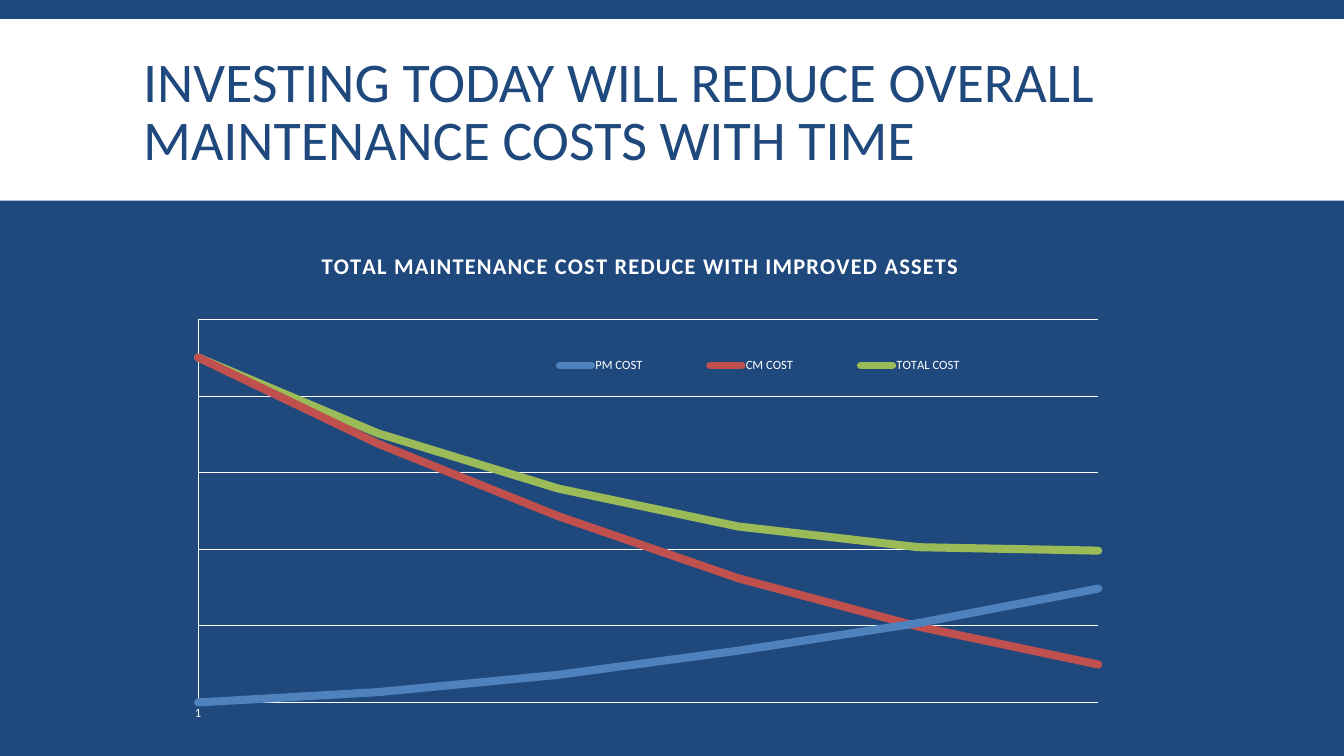
"""Build the maintenance cost slide with its smooth scatter chart."""
from dataclasses import dataclass

from pptx import Presentation
from pptx.chart.data import XyChartData
from pptx.dml.color import RGBColor
from pptx.enum.chart import XL_CHART_TYPE as CT, XL_LEGEND_POSITION as LP, XL_TICK_MARK as TM
from pptx.enum.shapes import MSO_SHAPE
from pptx.enum.text import MSO_ANCHOR, MSO_AUTO_SIZE, PP_ALIGN
from pptx.oxml import parse_xml
from pptx.oxml.ns import nsdecls, qn
from pptx.util import Inches, Pt

NAVY = RGBColor(0x1F, 0x49, 0x7D)
WHITE = RGBColor(0xFF, 0xFF, 0xFF)
BLUE = RGBColor(0x4F, 0x81, 0xBD)
RED = RGBColor(0xC0, 0x50, 0x4D)
GREEN = RGBColor(0x9B, 0xBB, 0x59)
FONT = "Calibri"


@dataclass
class Cost:
    name: str
    color: RGBColor
    values: tuple[int, ...]


COSTS = [
    Cost("PM COST", BLUE, (0, 3, 8, 15, 23, 33)),
    Cost("CM COST", RED, (100, 75, 54, 36, 22, 11)),
    Cost("TOTAL COST", GREEN, (100, 78, 62, 51, 45, 44)),
]


def style_font(font, size: float, color: RGBColor, bold: bool = False) -> None:
    font.name = FONT
    font.size = Pt(size)
    font.bold = bold
    font.color.rgb = color


def style_line(line, color: RGBColor, width: float) -> None:
    line.color.rgb = color
    line.width = Pt(width)


def place(element, index: int, inner: bool = False, **fractions: float) -> None:
    for old in element.findall(qn("c:layout")):
        element.remove(old)
    target = '<c:layoutTarget val="inner"/>' if inner else ""
    modes = '<c:xMode val="edge"/><c:yMode val="edge"/>'
    sizes = "".join(f'<c:{key} val="{val}"/>' for key, val in fractions.items())
    element.insert(index, parse_xml(
        f'<c:layout {nsdecls("c")}><c:manualLayout>{target}{modes}{sizes}'
        "</c:manualLayout></c:layout>"))


def add_title(s) -> None:
    band = s.shapes.add_shape(MSO_SHAPE.RECTANGLE, 0, Inches(0.19), Inches(13.33), Inches(1.8))
    band.shadow.inherit = False
    band.fill.solid()
    band.fill.fore_color.rgb = WHITE
    band.line.fill.background()
    s.shapes.element.insert(2, band.element)

    title = s.shapes.title
    title.left, title.top = Inches(1.32), Inches(0.31)
    title.width, title.height = Inches(10.7), Inches(1.65)
    tf = title.text_frame
    tf.text = "INVESTING TODAY WILL REDUCE OVERALL MAINTENANCE COSTS WITH TIME"
    tf.word_wrap = True
    tf.auto_size = MSO_AUTO_SIZE.NONE
    tf.vertical_anchor = MSO_ANCHOR.MIDDLE
    p = tf.paragraphs[0]
    p.alignment = PP_ALIGN.LEFT
    p.line_spacing = 0.85
    style_font(p.font, 40, NAVY)


def style_axes(chart) -> None:
    years, costs = chart.category_axis, chart.value_axis
    years.minimum_scale, years.maximum_scale, years.major_unit = 1, 6, 6
    costs.minimum_scale, costs.maximum_scale, costs.major_unit = 0, 111, 22.2
    costs.visible = False
    years.major_tick_mark = years.minor_tick_mark = TM.NONE
    style_font(years.tick_labels.font, 9, WHITE)
    style_line(years.format.line, WHITE, 0.75)
    for axis in (years, costs):
        axis.has_major_gridlines = True
        style_line(axis.major_gridlines.format.line, WHITE, 0.75)


def add_cost_chart(s) -> None:
    data = XyChartData()
    for cost in COSTS:
        series = data.add_series(cost.name)
        for x, y in enumerate(cost.values, 1):
            series.add_data_point(x, y)
    chart = s.shapes.add_chart(CT.XY_SCATTER_SMOOTH_NO_MARKERS, Inches(1.75), Inches(2.25),
                               Inches(9.33), Inches(5), data).chart
    style_font(chart.font, 10, WHITE)
    plot = chart.plots[0]
    plot.vary_by_categories = False
    for series, cost in zip(plot.series, COSTS):
        series.smooth = True
        style_line(series.format.line, cost.color, 5.75)
        series.format.line._ln.set("cap", "rnd")
    style_axes(chart)

    chart.has_title = True
    p = chart.chart_title.text_frame.paragraphs[0]
    r = p.add_run()
    r.text = "TOTAL MAINTENANCE COST REDUCE WITH IMPROVED ASSETS"
    style_font(r.font, 16, WHITE, bold=True)
    r._r.get_or_add_rPr().set("spc", "100")

    chart.has_legend = True
    legend = chart.legend
    legend.position = LP.TOP
    legend.include_in_layout = False
    style_font(legend.font, 9, WHITE)

    root = chart.element
    place(root.xpath("c:chart/c:title")[0], 1, x=0.15, y=0.04)
    place(root.xpath("c:chart/c:legend")[0], 1, x=0.34, y=0.25, w=0.56, h=0.05)
    place(root.xpath("c:chart/c:plotArea")[0], 0, inner=True, x=0.023, y=0.184, w=0.957, h=0.76)


def main() -> None:
    prs = Presentation()
    prs.slide_width, prs.slide_height = Inches(13.33), Inches(7.5)
    s = prs.slides.add_slide(prs.slide_layouts[5])
    s.background.fill.solid()
    s.background.fill.fore_color.rgb = NAVY
    add_title(s)
    add_cost_chart(s)
    prs.save("out.pptx")


if __name__ == "__main__":
    main()
